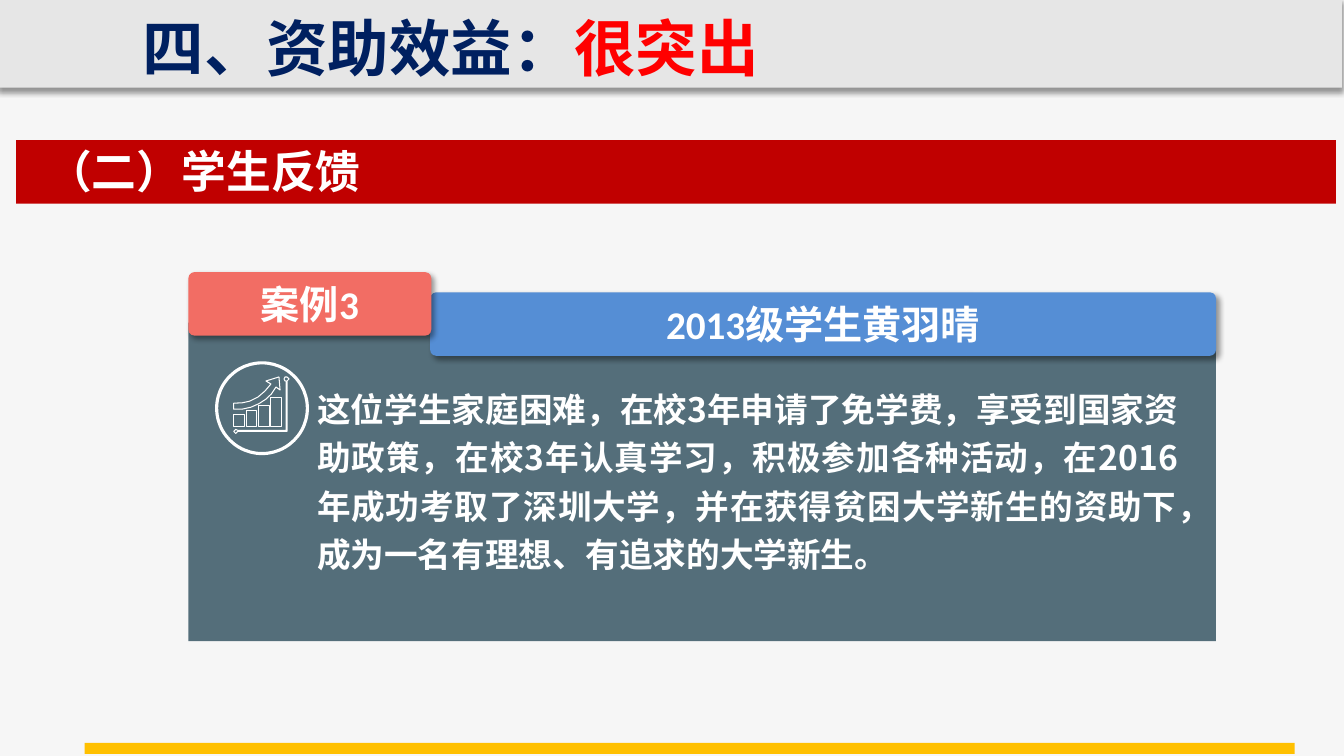
from dataclasses import dataclass
from typing import Optional

from lxml.etree import SubElement
from pptx import Presentation
from pptx.dml.color import RGBColor
from pptx.enum.shapes import MSO_SHAPE
from pptx.enum.text import MSO_ANCHOR, PP_ALIGN
from pptx.oxml.ns import qn
from pptx.util import Emu, Inches, Pt

SLIDE_WIDTH, SLIDE_HEIGHT = Inches(13.34), Inches(7.5)
CJK_FONT = "Noto Sans CJK SC"
WHITE = "FFFFFF"


@dataclass(frozen=True)
class Box:
    """Shares of the slide, in percent of its width and height."""
    left: float
    top: float
    width: float
    height: float

    def lengths(self) -> tuple[Emu, Emu, Emu, Emu]:
        return across(self.left), down(self.top), across(self.width), down(self.height)


@dataclass(frozen=True)
class Panel:
    box: Box
    fill: Optional[str] = None
    preset: MSO_SHAPE = MSO_SHAPE.RECTANGLE
    line_width: float = 0
    shadow_angle: Optional[int] = None


@dataclass(frozen=True)
class Label:
    box: Box
    runs: tuple[tuple[str, str], ...]
    size: float
    align: PP_ALIGN = PP_ALIGN.LEFT
    line_spacing: float = 1.0


@dataclass(frozen=True)
class Tab:
    box: Box
    fill: str
    text: str


def across(share: float) -> Emu:
    return Emu(round(SLIDE_WIDTH * share / 100))


def down(share: float) -> Emu:
    return Emu(round(SLIDE_HEIGHT * share / 100))


def color(value: str) -> RGBColor:
    return RGBColor.from_string(value)


def add_shadow(shape, angle: int) -> None:
    effects = shape._element.spPr.find(qn("a:effectLst"))
    shadow = SubElement(effects, qn("a:outerShdw"), blurRad=str(Pt(4)), dist=str(Pt(3)),
                        dir=str(angle * 60000), algn="t", rotWithShape="0")
    black = SubElement(shadow, qn("a:srgbClr"), val="000000")
    SubElement(black, qn("a:alpha"), val="40000")


def style_outline(shape, width: float) -> None:
    shape.shadow.inherit = False
    shape.fill.background()
    shape.line.color.rgb = color(WHITE)
    shape.line.width = Pt(width)


def draw_panel(slide, panel: Panel):
    shape = slide.shapes.add_shape(panel.preset, *panel.box.lengths())
    if panel.fill is None:
        style_outline(shape, panel.line_width)
        return shape
    shape.shadow.inherit = False
    shape.fill.solid()
    shape.fill.fore_color.rgb = color(panel.fill)
    shape.line.fill.background()
    if panel.shadow_angle is not None:
        add_shadow(shape, panel.shadow_angle)
    return shape


def set_font(paragraph, name: str, size: float) -> None:
    font = paragraph.font
    font.name, font.size, font.bold = name, Pt(size), True
    SubElement(paragraph._p.pPr.find(qn("a:defRPr")), qn("a:ea"), typeface=CJK_FONT)


def draw_label(slide, label: Label) -> None:
    frame = slide.shapes.add_textbox(*label.box.lengths()).text_frame
    frame.word_wrap = True
    paragraph = frame.paragraphs[0]
    paragraph.alignment = label.align
    paragraph.line_spacing = label.line_spacing
    for text, text_color in label.runs:
        run = paragraph.add_run()
        run.text = text
        run.font.color.rgb = color(text_color)
    set_font(paragraph, CJK_FONT, label.size)


def draw_tab(slide, tab: Tab) -> None:
    shape = draw_panel(slide, Panel(tab.box, tab.fill, MSO_SHAPE.ROUNDED_RECTANGLE,
                                    shadow_angle=45))
    shape.adjustments[0] = 0.096
    frame = shape.text_frame
    frame.vertical_anchor = MSO_ANCHOR.MIDDLE
    paragraph = frame.paragraphs[0]
    paragraph.text = tab.text
    paragraph.alignment = PP_ALIGN.CENTER
    set_font(paragraph, "Calibri", 28)
    paragraph.font.color.rgb = color(WHITE)


def draw_outline(slide, points: list[tuple[float, float]]) -> None:
    corners = [(across(x), down(y)) for x, y in points]
    builder = slide.shapes.build_freeform(*corners[0])
    builder.add_line_segments(corners[1:], close=True)
    style_outline(builder.convert_to_shape(), 0.75)


PANELS = [
    Panel(Box(-0.15, -0.4, 100, 12), "E6E6E6", shadow_angle=90),
    Panel(Box(1.2, 18.53, 98.2, 8.4), "C00000"),
    Panel(Box(6.3, 98.27, 90.03, 1.47), "FFC000"),
    Panel(Box(14.02, 42.67, 76.46, 42.13), "546E7A"),
]
TABS = [
    Tab(Box(32.01, 38.67, 58.47, 8.4), "558ED5", "2013级学生黄羽晴"),
    Tab(Box(14.02, 36, 18.07, 8.4), "F26D64", "案例3"),
]
LABELS = [
    Label(Box(9.9, 0.67, 89.58, 11.2), (("四、资助效益：", "002060"), ("很突出", "FF0000")), 44),
    Label(Box(2.77, 18.4, 85, 8.53), (("（二）学生反馈", WHITE),), 32),
    Label(Box(22.86, 49.73, 65.52, 27.2),
          (("这位学生家庭困难，在校3年申请了免学费，享受到国家资助政策，在校3年认真学习，"
            "积极参加各种活动，在2016年成功考取了深圳大学，并在获得贫困大学新生的资助下，"
            "成为一名有理想、有追求的大学新生。", WHITE),),
          24, PP_ALIGN.JUSTIFY, 1.2),
]
BAR_HEIGHTS = [1.6, 2.1, 2.8, 3.87]
BAR_LEFT, BAR_BOTTOM, BAR_STEP, BAR_WIDTH = 17.39, 56.47, 0.92, 0.8
GROWTH_ARROW = [
    (20.76, 49.87), (19.79, 50.4), (20.16, 50.8), (19.72, 51.73), (19.19, 52.53),
    (18.59, 53.07), (18, 53.3), (17.39, 53.33), (17.39, 54.13), (18, 54.13),
    (18.67, 53.87), (19.27, 53.4), (19.79, 52.8), (20.2, 52.1), (20.54, 51.2),
    (20.84, 51.6),
]
CHART_AXES = [
    (21.36, 49.87), (21.21, 49.87), (21.14, 50.13), (21.21, 50.4), (21.29, 50.4),
    (21.29, 56.93), (17.69, 56.93), (17.54, 56.8), (17.39, 57.07), (17.54, 57.33),
    (17.69, 57.07), (21.36, 57.07), (21.36, 50.4), (21.51, 50.13),
]


def main() -> None:
    presentation = Presentation()
    presentation.slide_width, presentation.slide_height = SLIDE_WIDTH, SLIDE_HEIGHT
    slide = presentation.slides.add_slide(presentation.slide_layouts[6])
    slide.background.fill.solid()
    slide.background.fill.fore_color.rgb = color("F6F6F6")
    for panel in PANELS:
        draw_panel(slide, panel)
    for tab in TABS:
        draw_tab(slide, tab)
    for label in LABELS:
        draw_label(slide, label)
    draw_panel(slide, Panel(Box(16.12, 48, 6.75, 12), preset=MSO_SHAPE.OVAL, line_width=2.25))
    for index, height in enumerate(BAR_HEIGHTS):
        box = Box(BAR_LEFT + index * BAR_STEP, BAR_BOTTOM - height, BAR_WIDTH, height)
        draw_panel(slide, Panel(box, line_width=0.75))
    for outline in (GROWTH_ARROW, CHART_AXES):
        draw_outline(slide, outline)
    presentation.save("out.pptx")


if __name__ == "__main__":
    main()
